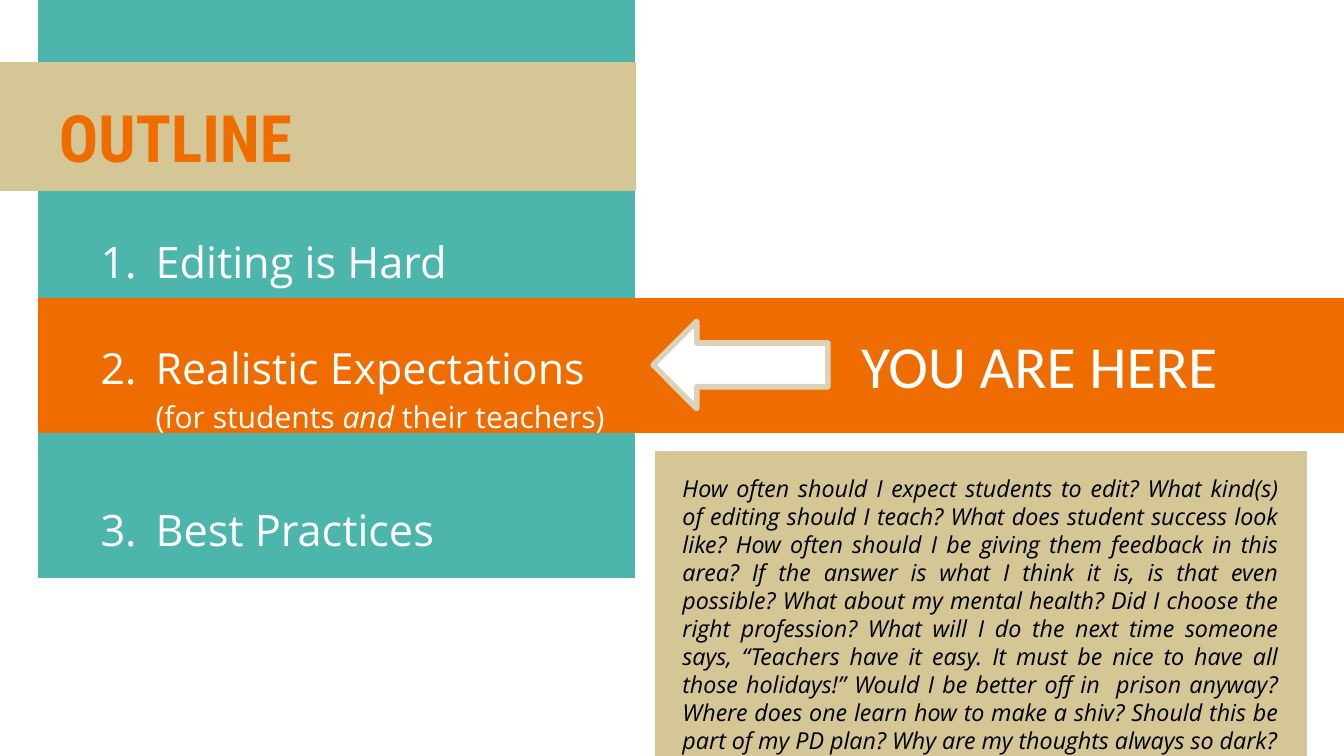
from pptx import Presentation
from pptx.dml.color import RGBColor
from pptx.enum.shapes import MSO_SHAPE
from pptx.enum.text import MSO_ANCHOR, PP_ALIGN
from pptx.oxml.ns import qn
from pptx.util import Inches, Pt

RECTANGLE, LEFT_ARROW = MSO_SHAPE.RECTANGLE, MSO_SHAPE.LEFT_ARROW
TOP, BOTTOM = MSO_ANCHOR.TOP, MSO_ANCHOR.BOTTOM
JUSTIFY = PP_ALIGN.JUSTIFY

SLIDE_WIDTH = 10
SLIDE_HEIGHT = SLIDE_WIDTH * 9 / 16

TEAL, SAND, ORANGE = "4DB6AC", "D5C695", "EF6C00"
PALE_SAND, WHITE, BLACK = "DAD3BA", "FFFFFF", "000000"
BODY_FONT = "Open Sans"

# left, top, width, height, fill
BANDS = [
    (0.29, -0.06, 4.43, 4.36, TEAL),
    (-0.17, 0.47, 4.9, 0.95, SAND),
    (0.29, 2.22, 9.71, 1, ORANGE),
    (4.88, 3.36, 4.84, 3.25, SAND),
]

# number (None for a remark), runs as (text, italic), size, space before
OUTLINE = [
    (1, [("Editing is Hard", False)], 23.2, 0),
    (2, [("Realistic Expectations", False)], 23, 25.4),
    (None, [("(for students ", False), ("and", True), (" their teachers)", False)], 16.1, 0),
    (3, [("Best Practices", False)], 23.2, 32.2),
]

QUESTIONS = (
    "How often should I expect students to edit? What kind(s) of editing should I teach? "
    "What does student success look like? How often should I be giving them feedback in this area? "
    "If the answer is what I think it is, is that even possible? What about my mental health? "
    "Did I choose the right profession? What will I do the next time someone says, "
    "“Teachers have it easy. It must be nice to have all those holidays!” "
    "Would I be better off in  prison anyway? Where does one learn how to make a shiv? "
    "Should this be part of my PD plan? Why are my thoughts always so dark?"
)


def rgb(color):
    return RGBColor.from_string(color)


def add_filled(slide, preset, left, top, width, height, fill, outline, weight):
    shape = slide.shapes.add_shape(
        preset, Inches(left), Inches(top), Inches(width), Inches(height))
    shape.shadow.inherit = False
    shape.fill.solid()
    shape.fill.fore_color.rgb = rgb(fill)
    shape.line.color.rgb = rgb(outline)
    shape.line.width = Pt(weight)


def add_text_frame(slide, left, top, width, height, anchor=TOP):
    frame = slide.shapes.add_textbox(
        Inches(left), Inches(top), Inches(width), Inches(height)).text_frame
    frame.word_wrap = True
    frame.vertical_anchor = anchor
    frame.margin_left = frame.margin_right = Inches(0.1)
    frame.margin_top = frame.margin_bottom = Inches(0.1)
    return frame


def style(run, font, size, color, bold=False, italic=False):
    run.font.name = font
    run.font.size = Pt(size)
    run.font.color.rgb = rgb(color)
    run.font.bold = bold
    run.font.italic = italic


def set_number(paragraph, number):
    """Hang the paragraph under a list number, or only indent it if there is none."""
    props = paragraph._p.get_or_add_pPr()
    props.set("marL", str(Inches(0.5)))
    props.set("indent", str(Inches(-0.41) if number else 0))
    if number:
        color = props.makeelement(qn("a:buClr"), {})
        color.append(color.makeelement(qn("a:srgbClr"), {"val": WHITE}))
        props.append(color)
        props.append(props.makeelement(
            qn("a:buAutoNum"), {"type": "arabicPeriod", "startAt": str(number)}))


def add_outline(slide):
    frame = add_text_frame(slide, 0.56, 1.59, 4.37, 2.82)
    for index, (number, runs, size, space_before) in enumerate(OUTLINE):
        paragraph = frame.add_paragraph() if index else frame.paragraphs[0]
        paragraph.line_spacing = 1.15
        paragraph.space_before = Pt(space_before)
        set_number(paragraph, number)
        for text, italic in runs:
            run = paragraph.add_run()
            run.text = text
            style(run, BODY_FONT, size, WHITE, italic=italic)


def main():
    deck = Presentation()
    deck.slide_width, deck.slide_height = Inches(SLIDE_WIDTH), Inches(SLIDE_HEIGHT)
    slide = deck.slides.add_slide(deck.slide_layouts[6])

    for *box, fill in BANDS:
        add_filled(slide, RECTANGLE, *box, fill, fill, 0.75)
    add_filled(slide, LEFT_ARROW, 4.86, 2.39, 1.3, 0.65, WHITE, PALE_SAND, 3)

    title = add_text_frame(slide, 0.34, 0.58, 3.07, 0.83, BOTTOM)
    title.text = "OUTLINE"
    style(title.paragraphs[0].runs[0], "Roboto Condensed", 35, ORANGE, bold=True)

    add_outline(slide)

    marker = add_text_frame(slide, 6.31, 2.35, 3.9, 0.74)
    marker.text = "YOU ARE HERE"
    style(marker.paragraphs[0].runs[0], "Calibri", 32, WHITE)

    questions = add_text_frame(slide, 4.98, 3.43, 4.63, 2.52)
    questions.text = QUESTIONS
    questions.paragraphs[0].alignment = JUSTIFY
    style(questions.paragraphs[0].runs[0], BODY_FONT, 12.5, BLACK, italic=True)

    deck.save("out.pptx")


if __name__ == "__main__":
    main()
